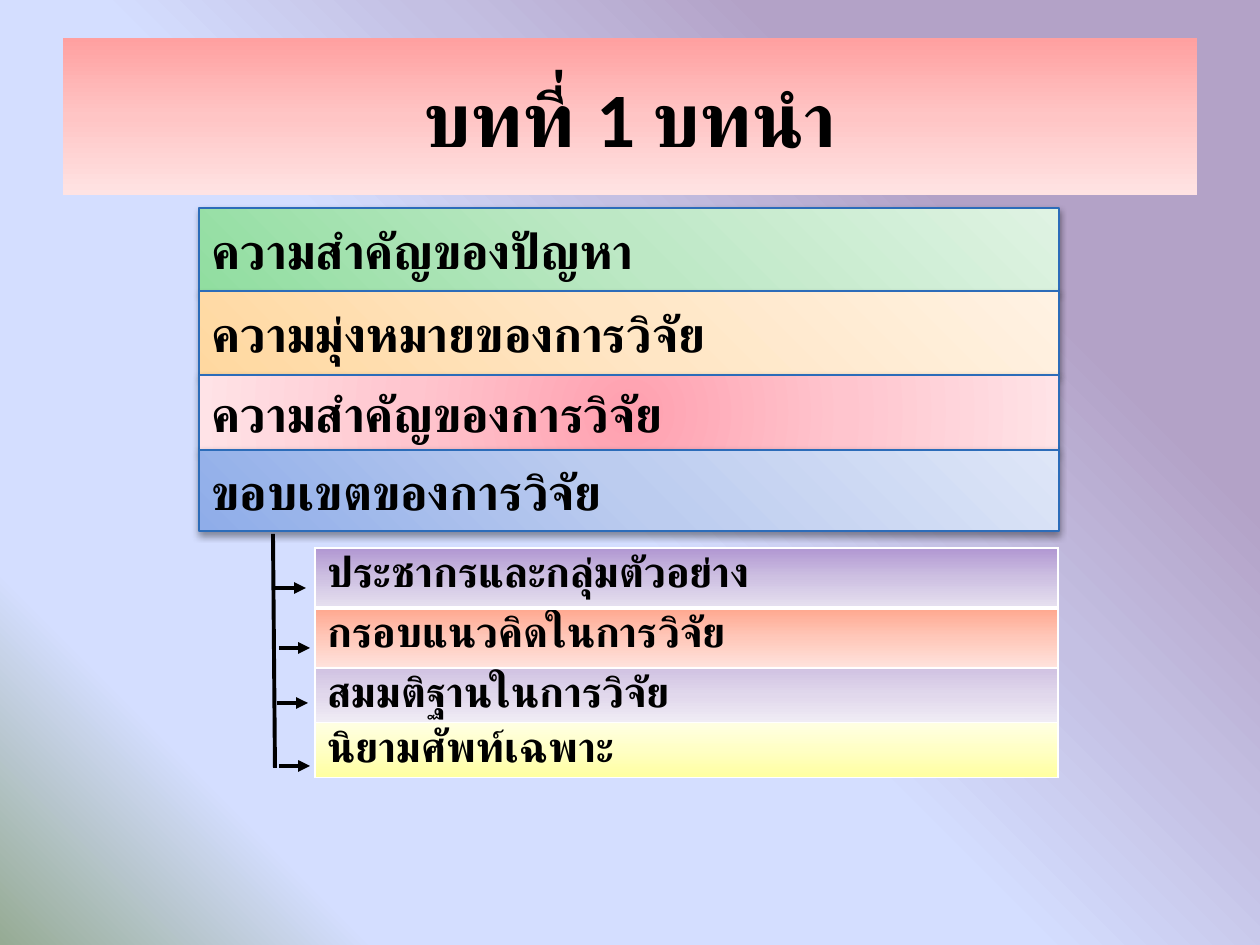
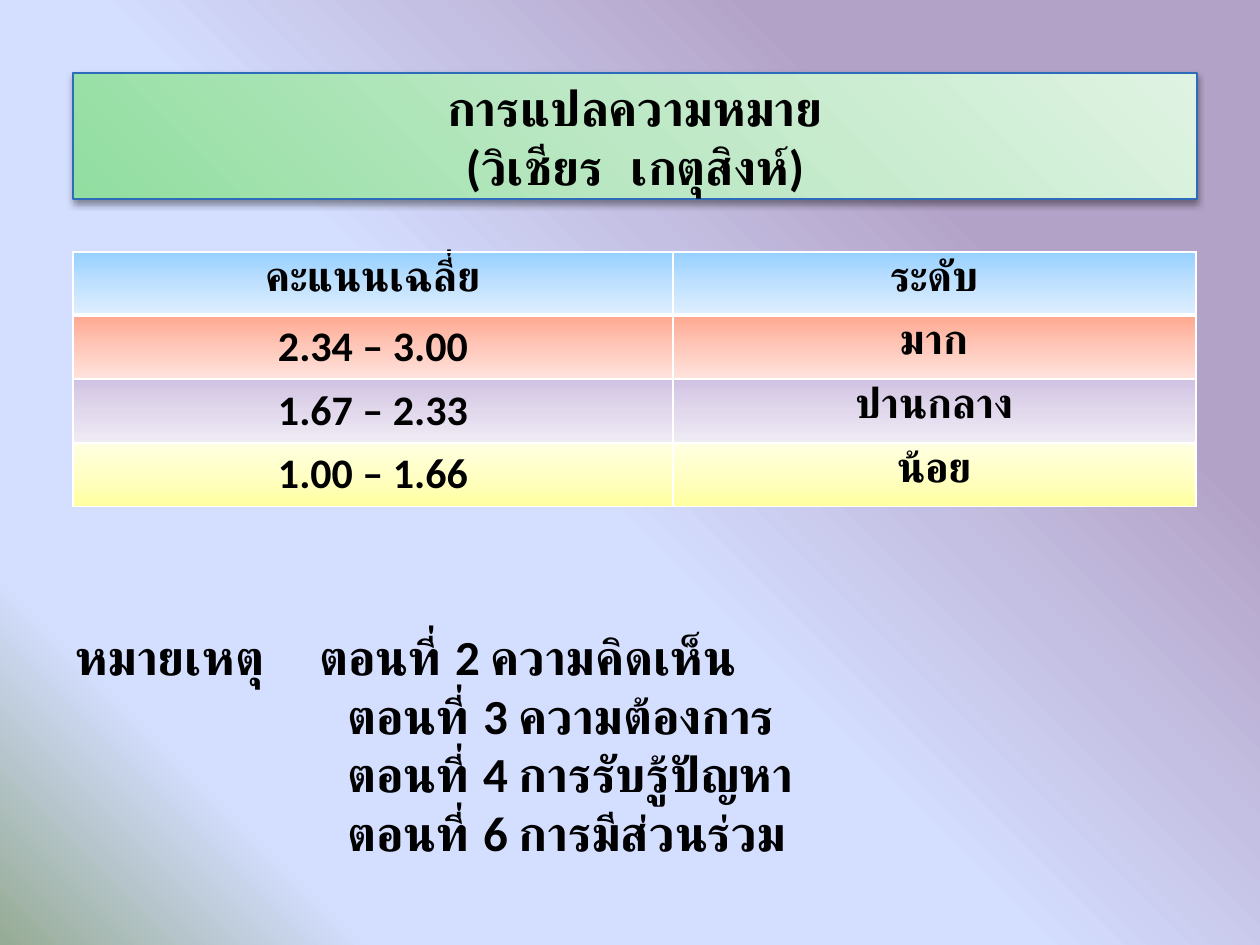
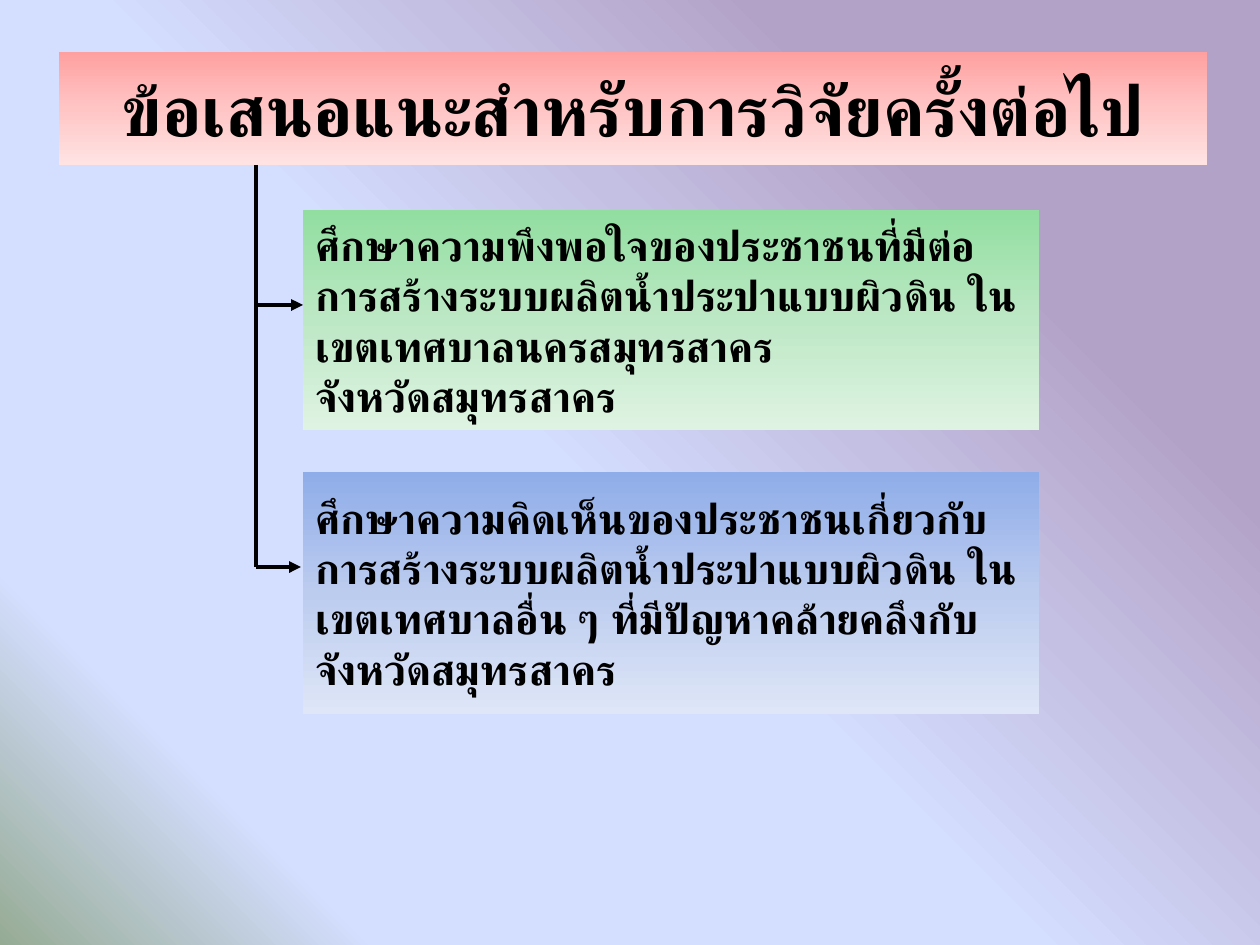
from lxml.etree import SubElement
from pptx import Presentation
from pptx.dml.color import RGBColor
from pptx.enum.shapes import MSO_CONNECTOR as Connector, MSO_SHAPE as Preset
from pptx.enum.text import MSO_ANCHOR as Anchor, MSO_AUTO_SIZE as AutoSize, PP_ALIGN as Align
from pptx.oxml.ns import qn
from pptx.util import Emu, Pt

EMU_PER_PX = 914400 / 126
FONT = "Calibri"
TITLE_AND_BODY, TITLE_ONLY = 1, 5

COLOURS = {
    "text": "000000",
    "outline": "2C6CB9",
    "grid": "FFFFFF",
    "red": ("FFA0A0", "FFC5C5", "FFE3E3"),
    "green": ("91DEA0", "BDE8C5", "DFF3E3"),
    "orange": ("FFD8A0", "FFE6C5", "FFF2E3"),
    "pink": ("FFA0AF", "FFC5CE", "FFE3E7"),
    "blue": ("8FADE9", "BCCCEF", "DEE6F7"),
    "sky": ("96D0FF", "BFE1FF", "E0EFFF"),
    "violet": ("B197D2", "CEC1E2", "E7E1F0"),
    "coral": ("FFA78E", "FFC8BA", "FFE3DD"),
    "lilac": ("D0C2E2", "E1D8EC", "F0ECF5"),
    "yellow": ("FFFFA0", "FFFFC5", "FFFFE3"),
    "backdrop": ("B3A2C7", "C4C0E3", "D4DEFF", "D4DEFF", "96AB94"),
}
BACKDROP_STOPS = (23, 38, 53, 83, 100)
CORNER = {"l": 0, "t": 100, "r": 100, "b": 0}
CENTRE = {"l": 50, "t": 50, "r": 50, "b": 50}


def px(length):
    return Emu(round(length * EMU_PER_PX))


def add_xml(parent, tag, **attributes):
    values = {name: str(value) for name, value in attributes.items()}
    return SubElement(parent, qn(tag), values)


def add_colour(parent, colour):
    return add_xml(parent, "a:srgbClr", val=colour)


def set_gradient(fill, element, name, angle=90, focus=None, stops=(0, 50, 100)):
    fill.gradient()
    gradient = element.find(".//" + qn("a:gradFill"))
    for child in list(gradient):
        gradient.remove(child)
    stop_list = add_xml(gradient, "a:gsLst")
    for position, colour in zip(stops, COLOURS[name]):
        add_colour(add_xml(stop_list, "a:gs", pos=position * 1000), colour)
    if focus:
        radial = add_xml(gradient, "a:path", path="circle")
        edges = {side: share * 1000 for side, share in focus.items()}
        add_xml(radial, "a:fillToRect", **edges)
    else:
        add_xml(gradient, "a:lin", ang=angle * 60000, scaled=0)


def style_para(para, size, align=Align.LEFT):
    para.alignment = align
    para.space_before = Pt(0)
    font = para.font
    font.name, font.size, font.bold = FONT, Pt(size), True
    font.color.rgb = RGBColor.from_string(COLOURS["text"])


def write_text(frame, lines, size, align=Align.LEFT, anchor=Anchor.MIDDLE):
    frame.word_wrap = True
    frame.auto_size = AutoSize.NONE
    frame.vertical_anchor = anchor
    frame.text = "\n".join(lines)
    for para in frame.paragraphs:
        style_para(para, size, align)


def place(shape, left, top, width, height):
    shape.left, shape.top = px(left), px(top)
    shape.width, shape.height = px(width), px(height)


def add_raised_edge(shape):
    shape.line.color.rgb = RGBColor.from_string(COLOURS["outline"])
    shape.line.width = Pt(1)
    shape.shadow.inherit = False
    effects = shape._element.spPr.find(qn("a:effectLst"))
    shadow = add_xml(effects, "a:outerShdw", blurRad=Pt(4), dist=Pt(2),
                     dir=90 * 60000, algn="ctr", rotWithShape=0)
    add_xml(add_colour(shadow, COLOURS["text"]), "a:alpha", val=40000)


def set_title(page, area, lines, size, colour="red", raised=False):
    title = page.shapes.title
    place(title, *area)
    set_gradient(title.fill, title._element.spPr, colour, focus=CORNER if raised else None)
    if raised:
        add_raised_edge(title)
    write_text(title.text_frame, lines, size, Align.CENTER)


def add_box(page, area, lines, size, colour, focus=None):
    box = page.shapes.add_shape(Preset.RECTANGLE, *map(px, area))
    set_gradient(box.fill, box._element.spPr, colour, focus=focus)
    if focus:
        add_raised_edge(box)
    else:
        box.line.fill.background()
        box.shadow.inherit = False
    write_text(box.text_frame, lines, size)


def add_line(page, start, end, arrow=False):
    line = page.shapes.add_connector(Connector.STRAIGHT, *map(px, start + end))
    line.line.color.rgb = RGBColor.from_string(COLOURS["text"])
    line.line.width = Pt(2.25)
    if arrow:
        add_xml(line.line._get_or_add_ln(), "a:tailEnd", type="triangle")
    add_xml(line._element.spPr, "a:effectLst")


def set_borders(cell, row):
    properties = cell._tc.get_or_add_tcPr()
    widths = {"L": 1, "R": 1, "T": 3 if row == 1 else 1, "B": 3 if row == 0 else 1}
    for index, (side, width) in enumerate(widths.items()):
        border = add_xml(properties, "a:ln" + side, w=Pt(width))
        add_colour(add_xml(border, "a:solidFill"), COLOURS["grid"])
        properties.insert(index, border)


def add_grid(page, left, top, widths, heights, rows, colours, align=Align.LEFT):
    area = (left, top, sum(widths), sum(heights))
    table = page.shapes.add_table(len(rows), len(widths), *map(px, area)).table
    table.first_row = table.horz_banding = False
    for column, width in zip(table.columns, widths):
        column.width = px(width)
    for row, (height, texts, colour) in enumerate(zip(heights, rows, colours)):
        table.rows[row].height = px(height)
        for column, text in enumerate(texts):
            cell = table.cell(row, column)
            cell.text = text
            style_para(cell.text_frame.paragraphs[0], 24, align)
            angle = 270 if colour == "yellow" else 90
            set_gradient(cell.fill, cell._tc, colour, angle)
            set_borders(cell, row)


def set_note(page, area, label, parts):
    body = page.placeholders[1]
    place(body, *area)
    lines = [f"{label}\t{parts[0]}"] + parts[1:]
    write_text(body.text_frame, lines, 28, anchor=Anchor.TOP)
    for index, para in enumerate(body.text_frame.paragraphs):
        margin, indent = (272, 0) if index else (244, -244)
        properties = para._p.get_or_add_pPr()
        properties.set("marL", str(px(margin)))
        properties.set("indent", str(px(indent)))
        properties.insert(1, add_xml(properties, "a:buNone"))


def build_introduction(page):
    set_title(page, (63, 38, 1134, 157), ["บทที่ 1 บทนำ"], 44)
    topics = (
        ("ความสำคัญของปัญหา", "green", CORNER, 83),
        ("ความมุ่งหมายของการวิจัย", "orange", CORNER, 84),
        ("ความสำคัญของการวิจัย", "pink", CENTRE, 75),
        ("ขอบเขตของการวิจัย", "blue", CORNER, 81),
    )
    top = 208
    for text, colour, focus, height in topics:
        add_box(page, (199, top, 860, height), [text], 28, colour, focus)
        top += height
    scope = [["ประชากรและกลุ่มตัวอย่าง"], ["กรอบแนวคิดในการวิจัย"],
             ["สมมติฐานในการวิจัย"], ["นิยามศัพท์เฉพาะ"]]
    add_grid(page, 315, 548, [743], [60, 60, 54, 54], scope,
             ["violet", "coral", "lilac", "yellow"])
    add_line(page, (273, 534), (275, 768))
    for left, middle in ((275, 588), (279, 648), (277, 703), (279, 766)):
        add_line(page, (left, middle), (left + 31, middle), arrow=True)


def build_score_levels(page):
    set_title(page, (73, 73, 1124, 126), ["การแปลความหมาย", "(วิเชียร  เกตุสิงห์)"],
              28, "green", raised=True)
    levels = [["คะแนนเฉลี่ย", "ระดับ"], ["2.34 – 3.00", "มาก"],
              ["1.67 – 2.33", "ปานกลาง"], ["1.00 – 1.66", "น้อย"]]
    add_grid(page, 73, 252, [600, 523], [63] * 4, levels,
             ["sky", "coral", "lilac", "yellow"], Align.CENTER)
    set_note(page, (63, 620, 1040, 251), "หมายเหตุ",
             ["ตอนที่ 2 ความคิดเห็น", "ตอนที่ 3 ความต้องการ",
              "ตอนที่ 4 การรับรู้ปัญหา", "ตอนที่ 6 การมีส่วนร่วม"])


def build_suggestions(page):
    set_title(page, (59, 52, 1148, 113), ["ข้อเสนอแนะสำหรับการวิจัยครั้งต่อไป"], 40)
    add_box(page, (303, 210, 736, 220),
            ["ศึกษาความพึงพอใจของประชาชนที่มีต่อการสร้างระบบผลิตน้ำประปาแบบผิวดิน "
             "ในเขตเทศบาลนครสมุทรสาคร", "จังหวัดสมุทรสาคร"], 24, "green")
    add_box(page, (303, 472, 736, 242),
            ["ศึกษาความคิดเห็นของประชาชนเกี่ยวกับการสร้างระบบผลิตน้ำประปาแบบผิวดิน "
             "ในเขตเทศบาลอื่น ๆ ที่มีปัญหาคล้ายคลึงกับจังหวัดสมุทรสาคร"], 24, "blue")
    add_line(page, (256, 165), (256, 567))
    for middle, tip in ((305, 303), (567, 301)):
        add_line(page, (256, middle), (tip, middle), arrow=True)


def main():
    deck = Presentation()
    deck.slide_width, deck.slide_height = px(1260), px(945)
    master = deck.slide_master
    set_gradient(master.background.fill, master._element, "backdrop", 135,
                 stops=BACKDROP_STOPS)
    for layout, build in ((TITLE_ONLY, build_introduction),
                          (TITLE_AND_BODY, build_score_levels),
                          (TITLE_ONLY, build_suggestions)):
        build(deck.slides.add_slide(deck.slide_layouts[layout]))
    deck.save("out.pptx")


if __name__ == "__main__":
    main()
